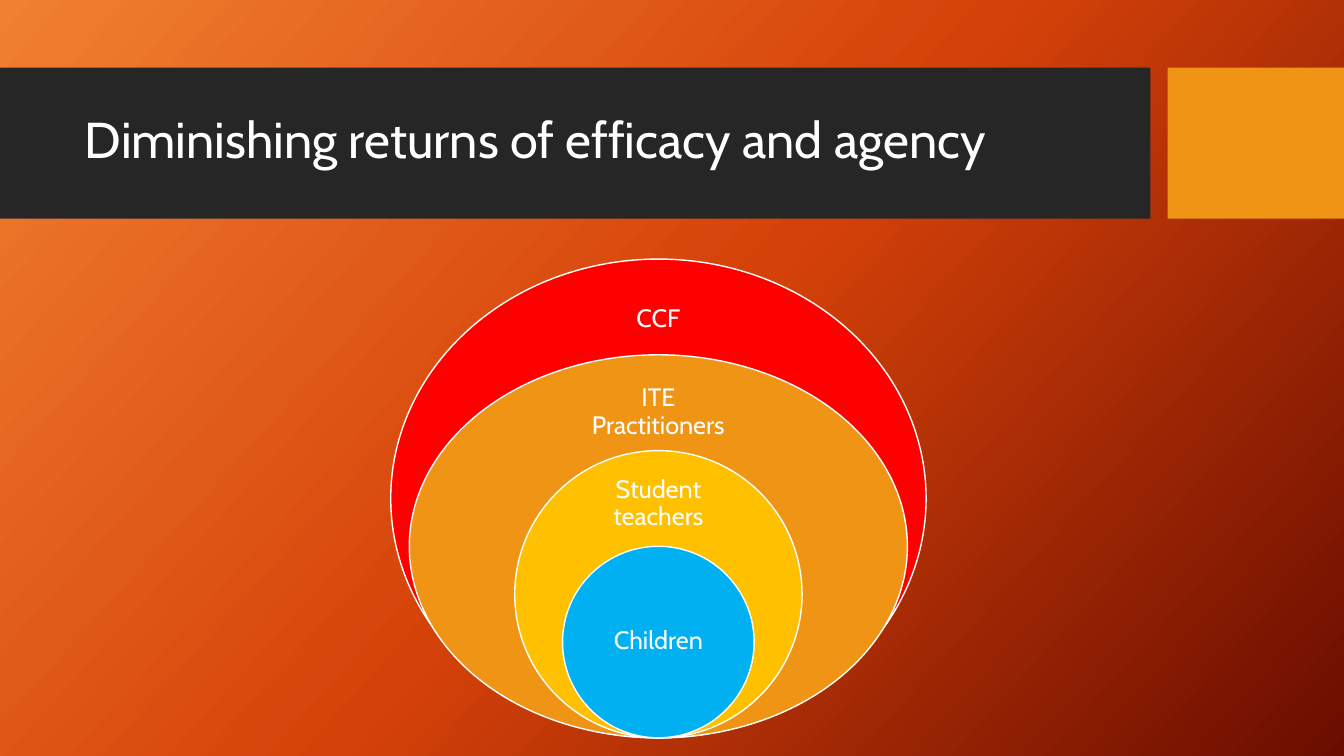
import copy
from dataclasses import dataclass

import pptx
from pptx.dml.color import RGBColor
from pptx.enum.shapes import MSO_SHAPE
from pptx.enum.text import MSO_ANCHOR, MSO_AUTO_SIZE, PP_ALIGN
from pptx.oxml.ns import qn
from pptx.util import Inches, Pt


@dataclass(frozen=True)
class Theme:
    font: str = "Cabin"
    title_size: int = 36
    label_size: int = 18
    white: str = "FFFFFF"
    charcoal: str = "262626"
    amber: str = "F09415"
    red: str = "FF0000"
    yellow: str = "FFC000"
    blue: str = "00B0F0"
    gradient: tuple = ((0, "F18031"), (0.5, "D54209"), (1, "6A0D00"))


theme = Theme()


def write(shape, text, size, align=PP_ALIGN.LEFT, inset=0.1):
    frame = shape.text_frame
    frame.word_wrap = True
    frame.auto_size = MSO_AUTO_SIZE.NONE
    frame.vertical_anchor = MSO_ANCHOR.MIDDLE
    frame.margin_left = frame.margin_right = Inches(inset)
    frame.margin_top = frame.margin_bottom = Inches(min(inset, 0.14))
    para = frame.paragraphs[0]
    para.alignment = align
    para.line_spacing = 0.9
    span = para.add_run()
    span.text = text
    span.font.name = theme.font
    span.font.size = Pt(size)
    span.font.color.rgb = RGBColor.from_string(theme.white)


def add_filled(page, kind, left, top, width, height, color, outline=None):
    shape = page.shapes.add_shape(
        kind, Inches(left), Inches(top), Inches(width), Inches(height))
    shape.shadow.inherit = False
    shape.fill.solid()
    shape.fill.fore_color.rgb = RGBColor.from_string(color)
    if outline:
        shape.line.color.rgb = RGBColor.from_string(outline)
        shape.line.width = Pt(1)
    else:
        shape.line.fill.background()


deck = pptx.Presentation()
deck.slide_width, deck.slide_height = Inches(13.33), Inches(7.5)
page = deck.slides.add_slide(deck.slide_layouts[5])

# Background: three-stop diagonal gradient
backdrop = page.background.fill
backdrop.gradient()
backdrop.gradient_angle = 360 - 42
stop_list = page.element.find(".//" + qn("a:gsLst"))
stop_list.append(copy.deepcopy(stop_list[-1]))
for stop, (position, color) in zip(backdrop.gradient_stops, theme.gradient):
    stop.position = position
    stop.color.rgb = RGBColor.from_string(color)

# Title band, with the title brought in front of it
add_filled(page, MSO_SHAPE.RECTANGLE, 0, 0.67, 11.41, 1.5, theme.charcoal)
add_filled(page, MSO_SHAPE.RECTANGLE, 11.58, 0.67, 1.75, 1.5, theme.amber)
title = page.shapes.title
title.element.getparent().append(title.element)
title.left, title.top = Inches(0.74), Inches(0.82)
title.width, title.height = Inches(10.51), Inches(1.18)
write(title, "Diminishing returns of efficacy and agency", theme.title_size)

# Nested ellipses share a centre line and a bottom; each is one step shorter
center, bottom, step = 6.53, 7.32, 0.95
rings = [
    # text, color, ring width, label top, label width, label height
    ("CCF", theme.red, 5.31, 2.81, 1.49, 0.71),
    ("ITE Practitioners", theme.amber, 4.94, 3.75, 1.73, 0.68),
    ("Student teachers", theme.yellow, 2.85, 4.68, 1.33, 0.64),
    ("Children", theme.blue, 1.9, 5.89, 1.34, 0.95),
]
for index, (text, color, width, label_top, label_width, label_height) in enumerate(rings):
    height = step * (5 - index)
    add_filled(page, MSO_SHAPE.OVAL, center - width / 2, bottom - height,
               width, height, color, outline=theme.white)
    label = page.shapes.add_textbox(
        Inches(center - label_width / 2), Inches(label_top),
        Inches(label_width), Inches(label_height))
    write(label, text, theme.label_size, align=PP_ALIGN.CENTER, inset=0.14)

deck.save("out.pptx")
